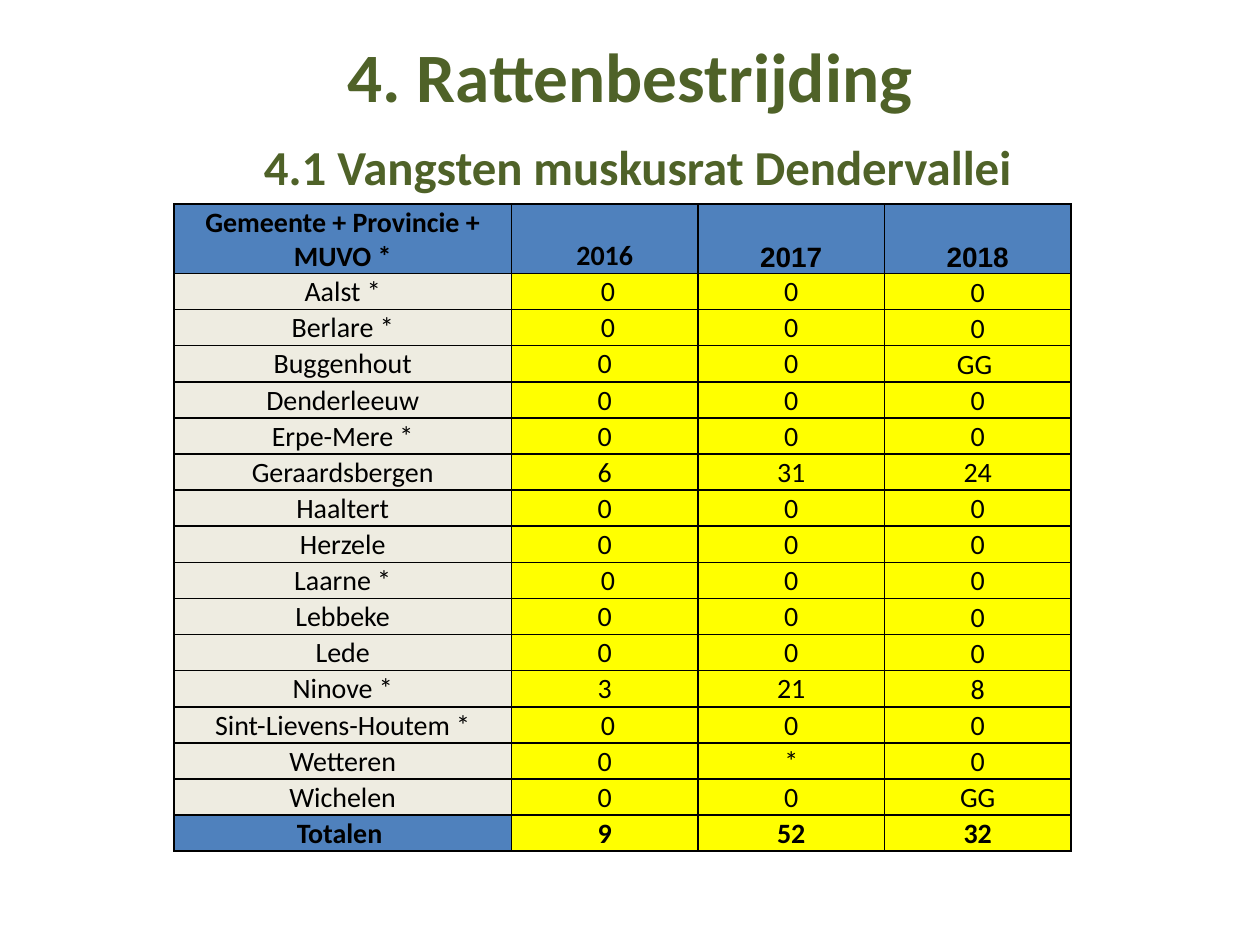
import pptx
import pptx.util
import pptx.dml.color
import pptx.enum.text
import pptx.oxml
import pptx.oxml.ns

Inches, Pt = pptx.util.Inches, pptx.util.Pt
Anchor = pptx.enum.text.MSO_ANCHOR
Align = pptx.enum.text.PP_ALIGN


def color(code):
    return pptx.dml.color.RGBColor.from_string(code)


def style(run, size, code, bold, face="Calibri"):
    run.font.size = Pt(size)
    run.font.color.rgb = color(code)
    run.font.bold = bold
    run.font.name = face


deck = pptx.Presentation()
deck.slide_width, deck.slide_height = Inches(10), Inches(7.5)
slide = deck.slides.add_slide(deck.slide_layouts[6])

title = slide.shapes.add_textbox(Inches(0.5), Inches(0.3), Inches(9), Inches(1.25))
frame = title.text_frame
frame.word_wrap = True
frame.vertical_anchor = Anchor.MIDDLE
para = frame.paragraphs[0]
para.alignment = Align.CENTER
para.text = "4. Rattenbestrijding\v "
para.add_run().text = "4.1 Vangsten muskusrat Dendervallei"
for run, size in zip(para.runs, [39.6, 39.6, 27.9]):
    style(run, size, "4F6228", True)

rows = [
    ["Gemeente + Provincie + MUVO *", "2016", "2017", "2018"],
    ["Aalst *", " 0", "0", "0"],
    ["Berlare *", " 0", "0", "0"],
    ["Buggenhout", "0", "0", "GG "],
    ["Denderleeuw", "0", "0", "0"],
    ["Erpe-Mere *", "0", "0", "0"],
    ["Geraardsbergen", "6", "31", "24"],
    ["Haaltert", "0", "0", "0"],
    ["Herzele", "0", "0", "0"],
    ["Laarne *", " 0", "0", "0"],
    ["Lebbeke", "0", "0", "0"],
    ["Lede", "0", "0", "0"],
    ["Ninove *", "3", "21", "8"],
    ["Sint-Lievens-Houtem *", " 0", "0", "0"],
    ["Wetteren", "0", "*", "0"],
    ["Wichelen", "0", "0", "GG"],
    ["Totalen ", "9", "52", "32"],
]
last = len(rows) - 1
high, head = Inches(5.14), Inches(0.55)
grid = slide.shapes.add_table(len(rows), 4, Inches(1.38), Inches(1.62), Inches(7.11), high).table
for col, width in zip(grid.columns, [2.68, 1.48, 1.48, 1.48]):
    col.width = Inches(width)

for r, row in enumerate(rows):
    grid.rows[r].height = head if r == 0 else (high - head) // last
    for c, text in enumerate(row):
        cell = grid.cell(r, c)
        bold = r in (0, last)
        cell.margin_left = cell.margin_right = cell.margin_top = Inches(0.01)
        cell.margin_bottom = 0
        cell.vertical_anchor = Anchor.BOTTOM if bold or c == 3 else Anchor.MIDDLE
        para = cell.text_frame.paragraphs[0]
        para.text = text
        para.alignment = Align.CENTER
        face = "Arial" if r == 0 and c > 1 else "Calibri"
        style(para.runs[0], 16, "000000", bold, face)
        props = cell._tc.get_or_add_tcPr()
        for side in ["lnL", "lnR", "lnT", "lnB"]:
            props.append(pptx.oxml.parse_xml(
                f'<a:{side} {pptx.oxml.ns.nsdecls("a")} w="12700"><a:solidFill>'
                f'<a:srgbClr val="000000"/></a:solidFill></a:{side}>'))
        cell.fill.solid()
        side_fill = "4F81BD" if bold else "EEECE1"
        cell.fill.fore_color.rgb = color(side_fill if r == 0 or c == 0 else "FFFF00")

deck.save("out.pptx")
